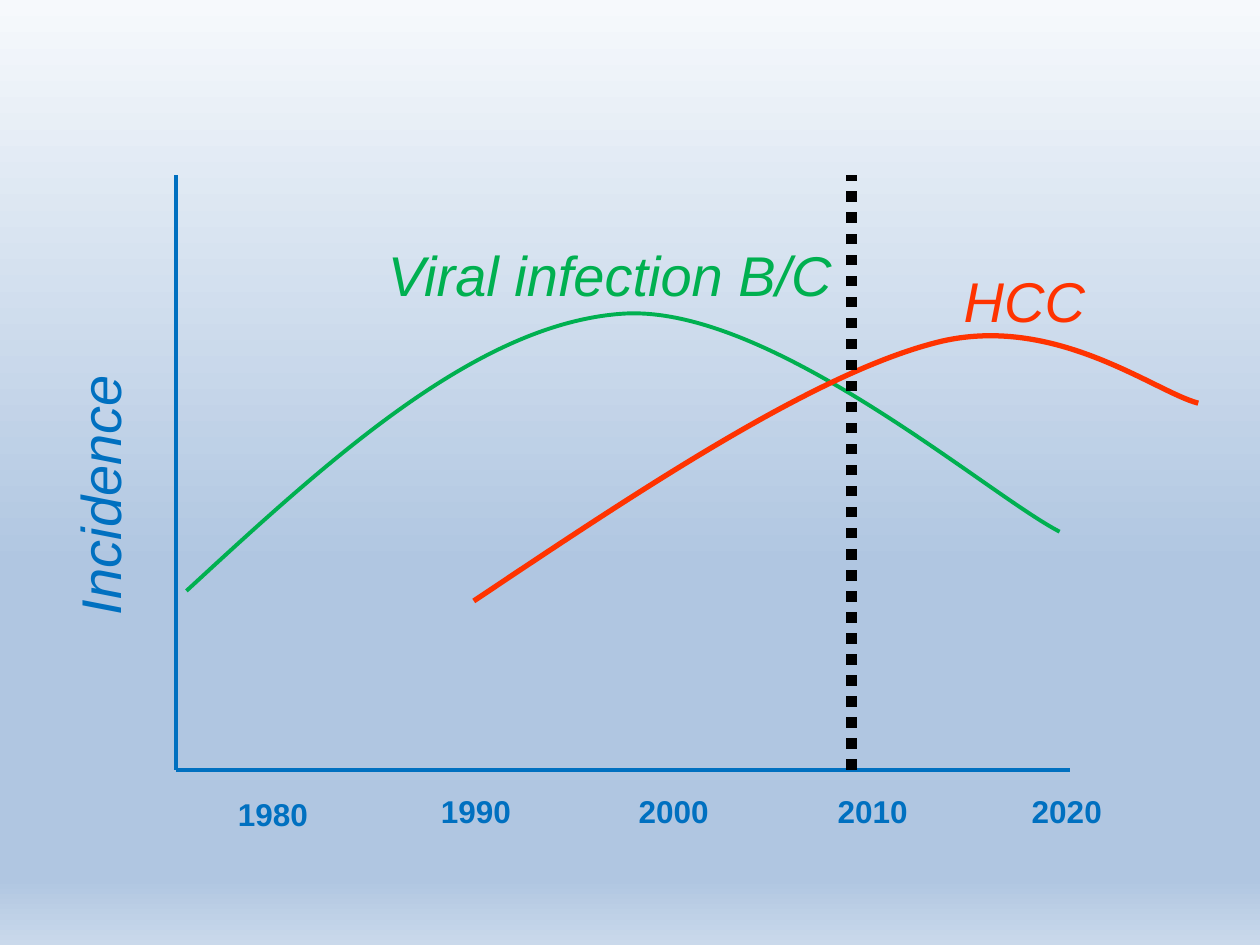
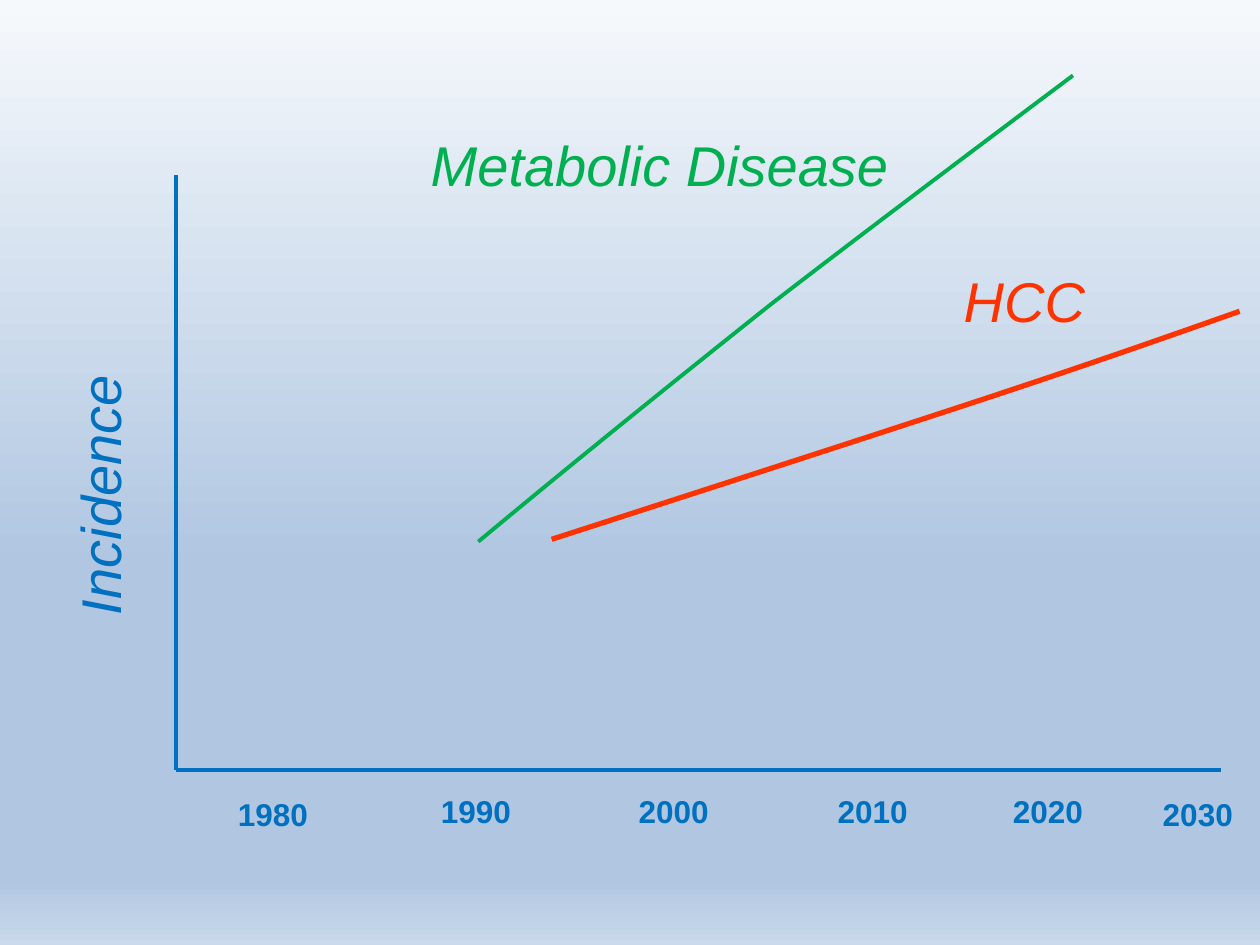
from copy import deepcopy
from math import cos, radians, sin

from lxml.etree import SubElement
from pptx import Presentation
from pptx.dml.color import RGBColor
from pptx.enum.dml import MSO_LINE
from pptx.enum.shapes import MSO_CONNECTOR
from pptx.enum.text import MSO_AUTO_SIZE
from pptx.oxml.ns import qn
from pptx.util import Inches, Pt

BLUE = RGBColor(0x00, 0x70, 0xC0)
GREEN = RGBColor(0x00, 0xB0, 0x50)
RED = RGBColor(0xFF, 0x33, 0x00)
BLACK = RGBColor(0x00, 0x00, 0x00)
BACKGROUND_STOPS = [
    (0, RGBColor(0xF6, 0xF9, 0xFC)),
    (0.6, RGBColor(0xB0, 0xC6, 0xE1)),
    (0.93, RGBColor(0xB0, 0xC6, 0xE1)),
    (1, RGBColor(0xCA, 0xD9, 0xEB)),
]
FONT = "Arial"
AXIS_LEFT, AXIS_TOP, AXIS_BOTTOM = 1.4, 1.39, 6.11


def turn_back(point, center, degrees):
    """Return where the point lies before a clockwise turn around the center."""
    angle = radians(degrees)
    x, y = point[0] - center[0], point[1] - center[1]
    return (
        center[0] + x * cos(angle) + y * sin(angle),
        center[1] - x * sin(angle) + y * cos(angle),
    )


class IncidenceDeck:
    def __init__(self):
        self.presentation = Presentation()
        self.presentation.slide_width = Inches(10)
        self.presentation.slide_height = Inches(7.5)
        self.slide = None
        self.set_background()

    def set_background(self):
        """Give the slide master a vertical gradient that all slides inherit."""
        master = self.presentation.slide_master
        fill = master.background.fill
        fill.gradient()
        fill.gradient_angle = 270
        stop_list = master.element.xpath("./p:cSld/p:bg//a:gsLst")[0]
        while len(stop_list) < len(BACKGROUND_STOPS):
            stop_list.append(deepcopy(stop_list[0]))
        for stop, (position, color) in zip(fill.gradient_stops, BACKGROUND_STOPS):
            stop.position = position
            stop.color.rgb = color

    def add_slide(self):
        self.slide = self.presentation.slides.add_slide(self.presentation.slide_layouts[6])

    def add_line(self, start, end, color=BLUE, width=2.25, dash=None):
        line = self.slide.shapes.add_connector(
            MSO_CONNECTOR.STRAIGHT, *(Inches(value) for value in (*start, *end))
        )
        line.line.color.rgb = color
        line.line.width = Pt(width)
        if dash:
            line.line.dash_style = dash
        SubElement(line.element.spPr, qn("a:effectLst"))

    def add_text(self, text, left, top, width, height, color, size=32, vertical=False):
        """Add a label: years are bold, the large names are italic."""
        shape = self.slide.shapes.add_textbox(
            Inches(left), Inches(top), Inches(width), Inches(height)
        )
        text_frame = shape.text_frame
        text_frame.text = text
        text_frame.word_wrap = False
        text_frame.auto_size = MSO_AUTO_SIZE.SHAPE_TO_FIT_TEXT
        if vertical:
            shape.element.xpath(".//a:bodyPr")[0].set("vert", "vert270")
        font = text_frame.paragraphs[0].runs[0].font
        font.name = FONT
        font.size = Pt(size)
        font.bold = size < 32
        font.italic = size >= 32
        font.color.rgb = color

    def add_curve(self, points, color, width, center=(0, 0), rotation=0):
        """Draw joined cubic curves: a start, then two controls and an end for each."""
        start, *others = [
            tuple(Inches(value) for value in turn_back(point, center, rotation))
            for point in points
        ]
        builder = self.slide.shapes.build_freeform(*start)
        builder.add_line_segments(others, close=False)
        curve = builder.convert_to_shape()
        segments = curve.element.xpath(".//a:lnTo")
        for first in range(0, len(segments), 3):
            cubic = SubElement(segments[first].getparent(), qn("a:cubicBezTo"))
            for segment in segments[first:first + 3]:
                cubic.append(segment[0])
                segment.getparent().remove(segment)
        curve.rotation = rotation
        curve.shadow.inherit = False
        curve.fill.background()
        curve.line.color.rgb = color
        curve.line.width = Pt(width)

    def add_axes(self, right, years):
        """Draw both axes, the year labels and the name of the vertical axis."""
        origin = (AXIS_LEFT, AXIS_BOTTOM)
        self.add_line((AXIS_LEFT, AXIS_TOP), origin)
        self.add_line(origin, (right, AXIS_BOTTOM))
        for year, left, top in years:
            self.add_text(str(year), left, top, 0.76, 0.4, BLUE, size=18)
        self.add_text("Incidence", 0.47, 2.96, 0.74, 2.02, BLUE, vertical=True)

    def add_cancer_curve(self, points, **turn):
        self.add_curve(points, RED, 3, **turn)
        self.add_text("HCC", 7.55, 2.07, 1.3, 0.64, RED)

    def add_cause_curve(self, points, name, left, top, width, **turn):
        self.add_text(name, left, top, width, 0.64, GREEN)
        self.add_curve(points, GREEN, 2.25, **turn)


def main():
    deck = IncidenceDeck()
    shared_years = [(1980, 1.79, 6.26), (1990, 3.4, 6.24), (2000, 4.97, 6.24), (2010, 6.55, 6.24)]

    deck.add_slide()
    deck.add_axes(8.49, shared_years + [(2020, 8.09, 6.24)])
    deck.add_cause_curve(
        [(1.48, 4.69), (2.63, 3.63), (3.79, 2.57), (4.94, 2.49),
         (6.1, 2.41), (7.83, 3.92), (8.41, 4.22)],
        "Viral infection B/C", 2.98, 1.86, 3.88,
    )
    deck.add_cancer_curve(
        [(3.76, 4.77), (5.09, 3.88), (6.43, 2.99), (7.39, 2.73),
         (8.34, 2.46), (9.16, 3.11), (9.51, 3.2)]
    )
    deck.add_line((6.76, AXIS_BOTTOM), (6.76, AXIS_TOP), BLACK, 6, MSO_LINE.ROUND_DOT)

    deck.add_slide()
    deck.add_axes(9.69, shared_years + [(2020, 7.94, 6.24), (2030, 9.13, 6.26)])
    deck.add_cancer_curve(
        [(4.38, 4.28), (5.65, 3.87), (6.92, 3.46), (7.83, 3.16),
         (8.74, 2.86), (9.5, 2.59), (9.84, 2.47)],
        center=(7.11, 3.38), rotation=341.4,
    )
    deck.add_cause_curve(
        [(3.79, 4.3), (4.56, 3.66), (5.34, 3.03), (6.12, 2.41),
         (6.91, 1.8), (8.11, 0.9), (8.51, 0.6)],
        "Metabolic Disease", 3.32, 0.99, 3.99,
        center=(6.14, 2.44), rotation=322,
    )

    deck.presentation.save("out.pptx")


if __name__ == "__main__":
    main()
